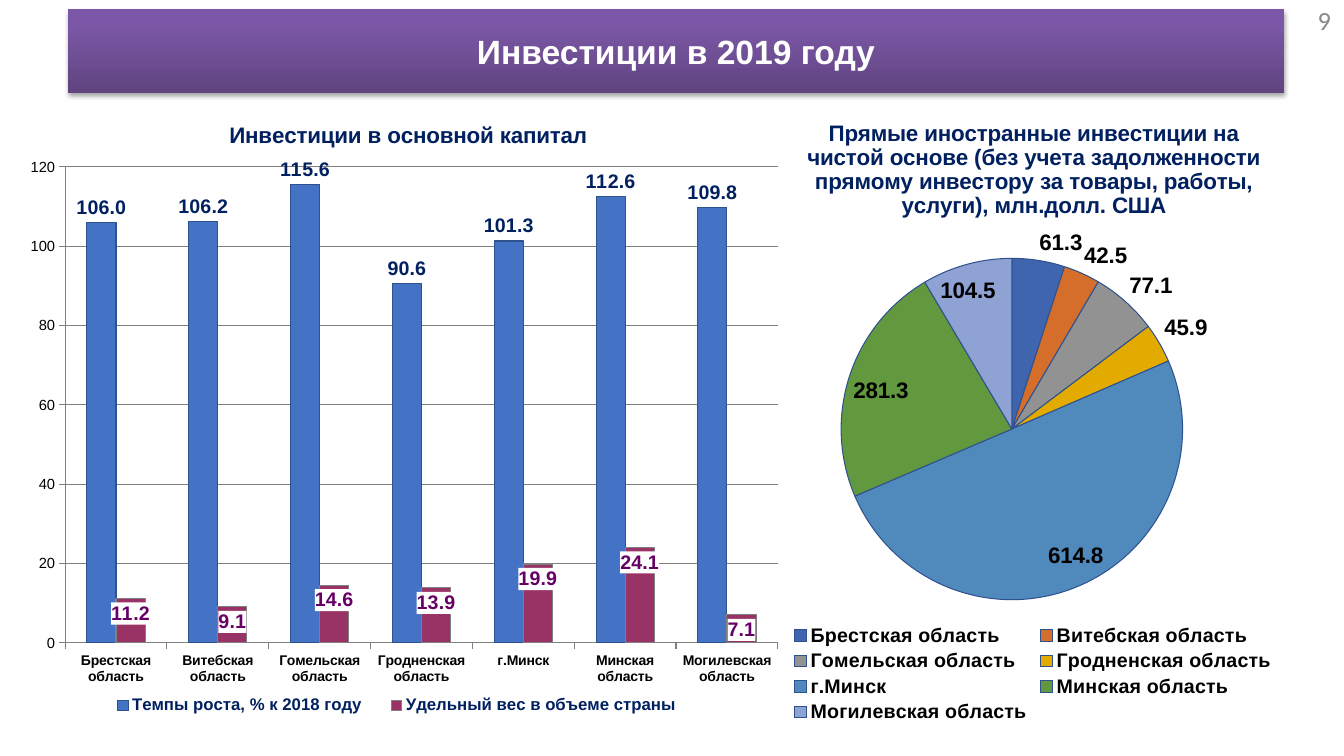
from lxml import etree
from pptx import Presentation
from pptx.chart.data import CategoryChartData
from pptx.dml.color import RGBColor
from pptx.enum.chart import XL_CHART_TYPE, XL_LABEL_POSITION, XL_LEGEND_POSITION, XL_TICK_MARK
from pptx.enum.shapes import MSO_SHAPE
from pptx.enum.text import MSO_ANCHOR, PP_ALIGN
from pptx.oxml import parse_xml
from pptx.oxml.ns import nsdecls, qn
from pptx.util import Inches, Pt

COLUMNS, PIE = XL_CHART_TYPE.COLUMN_CLUSTERED, XL_CHART_TYPE.PIE
OUT_END, IN_END, BEST_FIT = (XL_LABEL_POSITION.OUTSIDE_END, XL_LABEL_POSITION.INSIDE_END,
                             XL_LABEL_POSITION.BEST_FIT)
BOTTOM, TICK_OUT = XL_LEGEND_POSITION.BOTTOM, XL_TICK_MARK.OUTSIDE

# Content
HEADING = "Инвестиции в 2019 году"
PAGE = "9"
REGIONS = ["Брестская область", "Витебская область", "Гомельская область",
           "Гродненская область", "г.Минск", "Минская область", "Могилевская область"]
CAPITAL_TITLE = "Инвестиции в основной капитал"
CAPITAL = [
    # name, values, fill, outline, label colour, label position
    ("Темпы роста, % к 2018 году", [106, 106.2, 115.6, 90.6, 101.3, 112.6, 109.8],
     "blue", "outline", "navy", OUT_END),
    ("Удельный вес в объеме страны", [11.2, 9.1, 14.6, 13.9, 19.9, 24.1, 7.1],
     "plum", "grey", "purple", IN_END),
]
FOREIGN_TITLE = ("Прямые иностранные инвестиции на чистой основе (без учета задолженности "
                 "прямому инвестору за товары, работы, услуги), млн.долл. США")
FOREIGN = [61.3, 42.5, 77.1, 45.9, 614.8, 281.3, 104.5]
SLICES = ["3E65AE", "D46E2A", "929292", "E3AA00", "508ABD", "62993E", "8FA2D4"]
COLORS = {"white": "FFFFFF", "black": "000000", "navy": "002060", "blue": "4472C4",
          "outline": "2F528F", "plum": "993366", "purple": "660066", "grey": "808080",
          "page": "898989"}
BANNER_STOPS = [(0, "7C57A8"), (20, "7B58A6"), (37, "75539D"), (100, "5F4480")]

# Chart parts as shares of the chart frame
CAPITAL_PLOT, CAPITAL_LEGEND = (0.063, 0.119, 0.917, 0.744), (0.1, 0.94, 0.78, 0.04)
FOREIGN_PLOT, FOREIGN_LEGEND = (0.181, 0.262, 0.577, 0.535), (0.09, 0.83, 0.83, 0.165)


def color(name):
    return RGBColor.from_string(COLORS.get(name, name))


def set_font(font, size, name, bold=False, face="Arial"):
    font.size, font.bold, font.name = Pt(size), bold, face
    font.color.rgb = color(name)


def set_layout(parent, share, before, inner=False):
    """Give a chart part a fixed place, ahead of the first child named in before."""
    for old in parent.findall(qn("c:layout")):
        parent.remove(old)
    target = '<c:layoutTarget val="inner"/>' if inner else ""
    modes = "".join(f'<c:{side}Mode val="edge"/>' for side in "xy")
    sizes = "".join(f'<c:{side} val="{value}"/>' for side, value in zip("xywh", share))
    layout = parse_xml(f'<c:layout {nsdecls("c")}><c:manualLayout>{target}{modes}{sizes}'
                       '</c:manualLayout></c:layout>')
    following = next(child for child in parent if child.tag in [qn(tag) for tag in before])
    following.addprevious(layout)


def add_chart(kind, frame, series, title, title_at, plot, legend, legend_size, legend_color):
    data = CategoryChartData(number_format="#,##0.0")
    data.categories = REGIONS
    for name, values in series:
        data.add_series(name, values)
    chart = slide.shapes.add_chart(kind, *[Inches(v) for v in frame], data).chart
    set_font(chart.font, 14, "black")
    chart.has_title = True
    heading = chart.chart_title.text_frame.paragraphs[0]
    run = heading.add_run()
    run.text = title
    set_font(run.font, 16, "navy", True)
    chart.has_legend = True
    chart.legend.position = BOTTOM
    chart.legend.include_in_layout = False
    set_font(chart.legend.font, legend_size, legend_color, True)
    root = chart.element
    set_layout(root.find(".//" + qn("c:title")), title_at, ["c:overlay", "c:txPr"])
    set_layout(root.find(".//" + qn("c:plotArea")), plot, ["c:barChart", "c:pieChart"], True)
    set_layout(chart.legend.element if hasattr(chart.legend, "element")
               else root.find(".//" + qn("c:legend")), legend, ["c:overlay", "c:spPr", "c:txPr"])
    return chart


def add_labels(labels, size, name, position):
    labels.show_value = True
    labels.number_format, labels.number_format_is_linked = "#,##0.0", False
    labels.position = position
    set_font(labels.font, size, name, True)


def paint(fmt, fill, line):
    fmt.fill.solid()
    fmt.fill.fore_color.rgb = color(fill)
    fmt.line.color.rgb = color(line)
    fmt.line.width = Pt(0.75)


prs = Presentation()
prs.slide_width, prs.slide_height = Inches(13.33), Inches(7.5)
slide = prs.slides.add_slide(prs.slide_layouts[6])

# Heading banner with gradient and soft shadow
banner = slide.shapes.add_shape(MSO_SHAPE.RECTANGLE, Inches(0.67), Inches(0.09),
                                Inches(12.07), Inches(0.83))
banner.line.fill.background()
stops = "".join(f'<a:gs pos="{at * 1000}"><a:srgbClr val="{rgb}"/></a:gs>'
                for at, rgb in BANNER_STOPS)
gradient = parse_xml(f'<a:gradFill {nsdecls("a")} rotWithShape="1"><a:gsLst>{stops}</a:gsLst>'
                     '<a:lin ang="5400000" scaled="0"/></a:gradFill>')
banner.element.spPr.find(qn("a:prstGeom")).addnext(gradient)
banner.shadow.inherit = False
shadow = etree.SubElement(banner.element.spPr.find(qn("a:effectLst")), qn("a:outerShdw"),
                          blurRad=str(Pt(3.1)), dist=str(Pt(1.8)), dir="5400000",
                          rotWithShape="0")
tint = etree.SubElement(shadow, qn("a:srgbClr"), val=COLORS["black"])
etree.SubElement(tint, qn("a:alpha"), val="35000")
banner.text_frame.vertical_anchor = MSO_ANCHOR.MIDDLE
line = banner.text_frame.paragraphs[0]
line.alignment = PP_ALIGN.CENTER
heading_run = line.add_run()
heading_run.text = HEADING
set_font(heading_run.font, 24, "white", True)

# Page number
page = slide.shapes.add_textbox(Inches(10.22), 0, Inches(3.11), Inches(0.4)).text_frame
page.word_wrap = True
page.vertical_anchor = MSO_ANCHOR.MIDDLE
page.margin_left = page.margin_right = Inches(0.13)
page.margin_top = page.margin_bottom = Inches(0.07)
page.paragraphs[0].alignment = PP_ALIGN.RIGHT
page_run = page.paragraphs[0].add_run()
page_run.text = PAGE
set_font(page_run.font, 18.7, "page", face="Calibri")

# Foreign investment pie
foreign = add_chart(PIE, (7.28, 0.9, 5.87, 6.34), [("Series 1", FOREIGN)], FOREIGN_TITLE,
                    (0.117, 0.037), FOREIGN_PLOT, FOREIGN_LEGEND, 14, "black")
pie = foreign.plots[0]
pie.vary_by_categories = True
for index, fill in enumerate(SLICES):
    paint(pie.series[0].points[index].format, fill, "outline")
add_labels(pie.series[0].data_labels, 16, "black", BEST_FIT)

# Fixed capital columns
capital = add_chart(COLUMNS, (0.16, 0.9, 7.71, 6.35), [row[:2] for row in CAPITAL],
                    CAPITAL_TITLE, (0.269, 0.04), CAPITAL_PLOT, CAPITAL_LEGEND, 12, "navy")
columns = capital.plots[0]
columns.vary_by_categories = False
columns.gap_width, columns.overlap = 150, 0
for bars, (_, _, fill, outline, label_color, position) in zip(columns.series, CAPITAL):
    paint(bars.format, fill, outline)
    add_labels(bars.data_labels, 14, label_color, position)
# White plates behind the labels of the shares
plate = parse_xml(f'<c:spPr {nsdecls("c", "a")}><a:solidFill><a:srgbClr val="{COLORS["white"]}"/>'
                  '</a:solidFill></c:spPr>')
capital.element.findall(".//" + qn("c:dLbls"))[-1].find(qn("c:numFmt")).addnext(plate)

regions, scale = capital.category_axis, capital.value_axis
for axis, size, bold in ((regions, 10, True), (scale, 10.5, False)):
    set_font(axis.tick_labels.font, size, "black", bold)
    axis.major_tick_mark = TICK_OUT
    axis.format.line.color.rgb = color("grey")
scale.minimum_scale, scale.maximum_scale, scale.major_unit = 0, 120, 20
scale.tick_labels.number_format, scale.tick_labels.number_format_is_linked = "0", False
scale.has_major_gridlines = True
scale.major_gridlines.format.line.color.rgb = color("grey")

prs.save("out.pptx")
